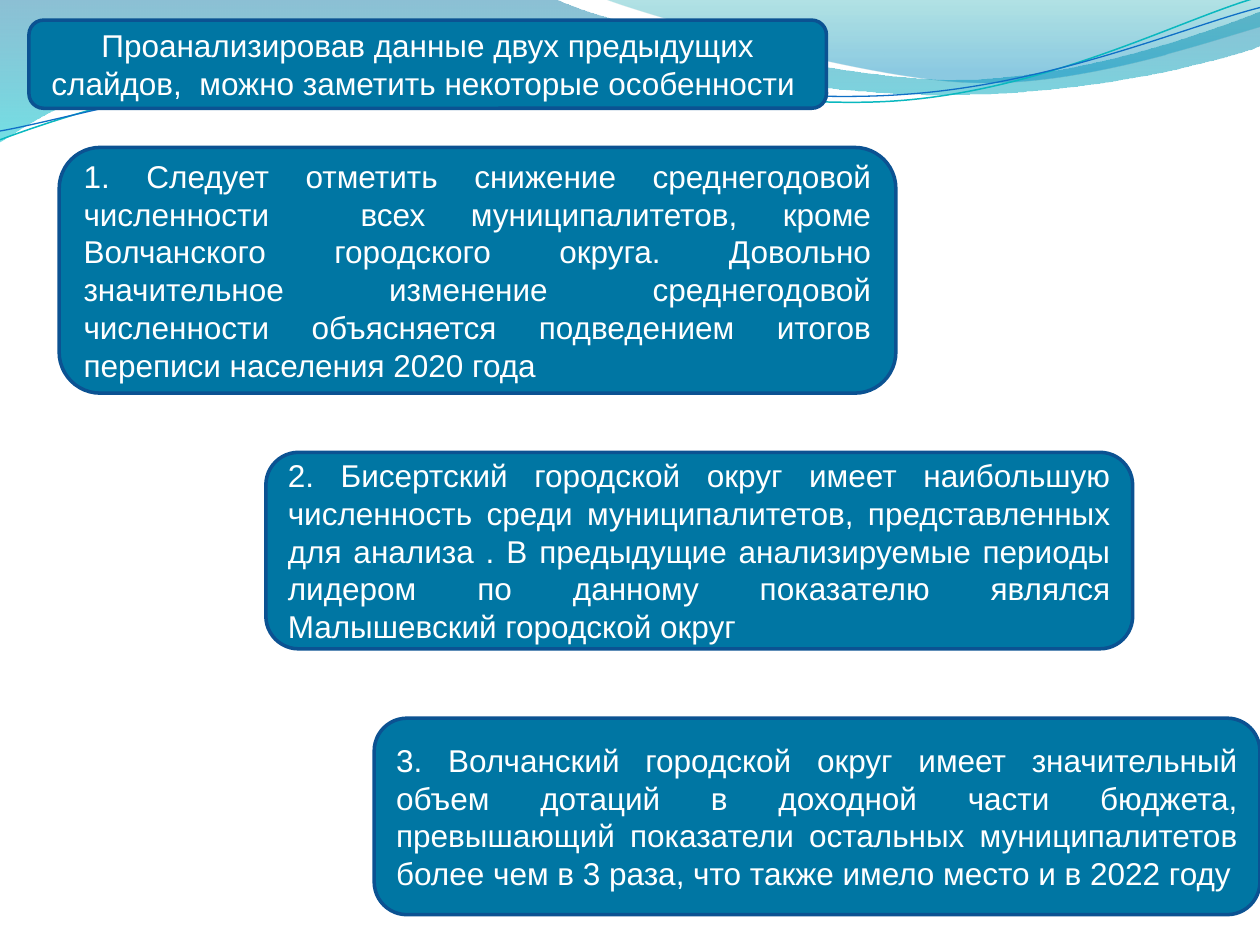
from dataclasses import dataclass

from lxml.etree import Element, SubElement
from pptx import Presentation
from pptx.dml.color import RGBColor
from pptx.enum.shapes import MSO_SHAPE
from pptx.enum.text import MSO_ANCHOR, PP_ALIGN
from pptx.oxml.ns import qn
from pptx.util import Inches, Pt


@dataclass(frozen=True)
class Theme:
    font: str = "Arial"
    size: float = 18
    text: str = "FFFFFF"
    box: str = "0076A3"
    border: str = "0B5292"
    border_width: float = 2
    # Gradient stops: position, colour, opacity in percent
    wide_wave: tuple = ((0, "0074A1", 45), (1, "00C6CF", 55))
    right_wave: tuple = ((0, "00A1A9", 30), (0.8, "008BBF", 45))
    teal_line: str = "0AB8BF"
    blue_line: str = "0F6FC6"


class SlideBuilder:
    def __init__(self, slide, theme):
        self.s, self.theme = slide, theme

    def outline(self, start, segments, close):
        """A segment is one point for a line, or three points for a curve."""
        points = [(Inches(x), Inches(y)) for seg in segments for x, y in seg]
        builder = self.s.shapes.build_freeform(*map(Inches, start))
        builder.add_line_segments(points, close=close)
        sp = builder.convert_to_shape()
        sp.shadow.inherit = False

        # Join each run of three line segments into one cubic curve
        lines = iter(list(sp._element.spPr.iter(qn("a:lnTo"))))
        for seg in segments:
            group = [next(lines) for _ in seg]
            if len(group) == 3:
                cubic = Element(qn("a:cubicBezTo"))
                group[0].addprevious(cubic)
                for line in group:
                    cubic.append(line[0])
                    line.getparent().remove(line)
        return sp

    def wave(self, stops, start, *segments):
        sp = self.outline(start, segments, close=True)
        sp.line.fill.background()
        sp.fill.gradient()
        sp.fill.gradient_angle = 270
        for stop, (pos, color, _) in zip(sp.fill.gradient_stops, stops):
            stop.position = pos
            stop.color.rgb = RGBColor.from_string(color)
        colors = list(sp._element.spPr.iter(qn("a:srgbClr")))
        for clr, (_, _, opacity) in zip(colors, stops):
            SubElement(clr, qn("a:alpha"), val=str(opacity * 1000))

    def curve(self, color, width, start, *segments):
        sp = self.outline(start, segments, close=False)
        sp.fill.background()
        sp.line.color.rgb = RGBColor.from_string(color)
        sp.line.width = Pt(width)

    def box(self, left, top, width, height, text, align=PP_ALIGN.JUSTIFY):
        th = self.theme
        sp = self.s.shapes.add_shape(
            MSO_SHAPE.ROUNDED_RECTANGLE,
            Inches(left), Inches(top), Inches(width), Inches(height))
        sp.shadow.inherit = False
        sp.fill.solid()
        sp.fill.fore_color.rgb = RGBColor.from_string(th.box)
        sp.line.color.rgb = RGBColor.from_string(th.border)
        sp.line.width = Pt(th.border_width)
        tf = sp.text_frame
        tf.word_wrap = True
        tf.vertical_anchor = MSO_ANCHOR.MIDDLE
        tf.text = text
        p = tf.paragraphs[0]
        p.alignment = align
        r = p.runs[0]
        r.font.name, r.font.size = th.font, Pt(th.size)
        r.font.color.rgb = RGBColor.from_string(th.text)


def main():
    prs = Presentation()
    prs.slide_width, prs.slide_height = Inches(10), Inches(7.5)
    theme = Theme()
    b = SlideBuilder(prs.slides.add_slide(prs.slide_layouts[6]), theme)

    # Waves along the top edge
    b.wave(theme.wide_wave, (0, 0),
           [(4.4, -0.01)],
           [(4.76, 0.17), (6.64, 0.63), (7.58, 0.63)],
           [(8.53, 0.63), (9.58, 0.26), (10, 0.09)],
           [(10.01, 0.36)],
           [(9.83, 0.44), (8.7, 0.76), (7.46, 0.75)],
           [(6.22, 0.75), (3.82, 0.28), (2.57, 0.34)],
           [(1.29, 0.36), (0.46, 0.83), (-0.01, 1.13)],
           [(0, 0)])
    b.wave(theme.right_wave, (4.79, -0.01),
           [(5.09, 0.11), (6.82, 0.62), (7.69, 0.65)],
           [(8.56, 0.69), (9.61, 0.32), (10, 0.21)],
           [(10, 0)],
           [(4.79, -0.01)])

    # Thin curves
    b.curve(theme.teal_line, 0.85, (0, 1.11),
            [(0.48, 0.93), (1.58, 0.57), (2.77, 0.52)],
            [(3.95, 0.47), (5.93, 0.89), (7.13, 0.8)],
            [(8.33, 0.71), (9.38, 0.15), (9.98, -0.02)])
    b.curve(theme.blue_line, 0.75, (0, 1.04),
            [(0.47, 0.96), (1.64, 0.61), (2.83, 0.56)],
            [(4.03, 0.51), (5.97, 0.84), (7.17, 0.75)],
            [(8.36, 0.67), (9.41, 0.21), (10, 0.06)])

    # Heading
    b.box(0.23, 0.16, 6.33, 0.7,
          "Проанализировав данные двух предыдущих слайдов,  можно заметить "
          "некоторые особенности ", PP_ALIGN.CENTER)

    # Findings
    b.box(2.11, 3.59, 6.88, 1.56,
          "2. Бисертский городской округ имеет наибольшую численность среди "
          "муниципалитетов, представленных для анализа . В предыдущие "
          "анализируемые периоды лидером по данному показателю являлся "
          "Малышевский городской округ")
    b.box(2.97, 5.7, 7.03, 1.56,
          "3. Волчанский городской округ имеет значительный объем дотаций в "
          "доходной части бюджета, превышающий показатели остальных "
          "муниципалитетов более чем в 3 раза, что также имело место и в "
          "2022 году")
    b.box(0.47, 1.17, 6.64, 1.95,
          "1. Следует отметить снижение среднегодовой численности  всех "
          "муниципалитетов, кроме Волчанского городского округа. Довольно "
          "значительное изменение среднегодовой численности объясняется "
          "подведением итогов переписи населения 2020 года")

    prs.save("out.pptx")


if __name__ == "__main__":
    main()
